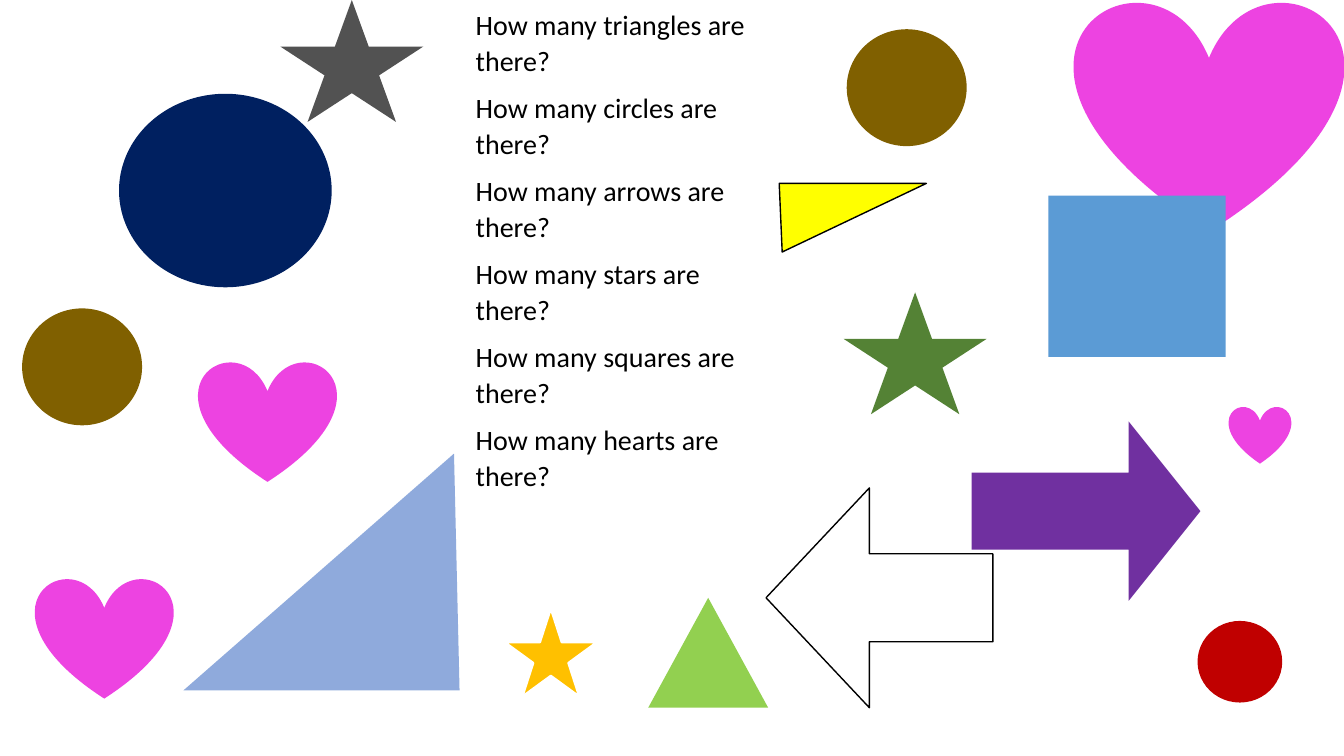
from pptx import Presentation
from pptx.dml.color import RGBColor
from pptx.enum.shapes import MSO_SHAPE
from pptx.enum.text import MSO_ANCHOR, MSO_AUTO_SIZE, PP_ALIGN
from pptx.oxml.xmlchemy import OxmlElement
from pptx.util import Pt

CIRCLE, HEART, STAR = MSO_SHAPE.OVAL, MSO_SHAPE.HEART, MSO_SHAPE.STAR_5_POINT
RECT, TRIANGLE = MSO_SHAPE.RECTANGLE, MSO_SHAPE.ISOSCELES_TRIANGLE
ARROW = MSO_SHAPE.RIGHT_ARROW
TOP, NO_FIT, LEFT = MSO_ANCHOR.TOP, MSO_AUTO_SIZE.NONE, PP_ALIGN.LEFT

BROWN, PINK, BLACK, WHITE = "806000", "ED43E1", "000000", "FFFFFF"


def rgb(value):
    return RGBColor.from_string(value)


def add_text(p, text, font="Calibri", size=20, color=BLACK):
    r = p.add_run()
    r.text = text
    r.font.name = font
    r.font.size = Pt(size)
    r.font.color.rgb = rgb(color)


class ShapeSlide:
    """Holds the text style and the current slide."""

    def __init__(self, prs, line_spacing=1.07, space_after=8):
        self.slide = prs.slides.add_slide(prs.slide_layouts[1])
        self.line_spacing = line_spacing
        self.space_after = space_after
        title = self.slide.shapes.title._element
        title.getparent().remove(title)

    def shape(self, kind, box, fill, line=None, width=1, adj=(), rotation=0,
              flip=False):
        sp = self.slide.shapes.add_shape(kind, *map(Pt, box))
        sp.shadow.inherit = False
        sp.fill.solid()
        sp.fill.fore_color.rgb = rgb(fill)
        if line:
            sp.line.color.rgb = rgb(line)
            sp.line.width = Pt(width)
        else:
            sp.line.fill.background()
        for i, value in enumerate(adj):
            sp.adjustments[i] = value
        sp.rotation = rotation
        if flip:
            sp._element.spPr.xfrm.set("flipH", "1")

    def questions(self, box, lines):
        sp = self.slide.placeholders[1]
        sp.left, sp.top, sp.width, sp.height = map(Pt, box)
        tf = sp.text_frame
        tf.word_wrap, tf.auto_size, tf.vertical_anchor = True, NO_FIT, TOP
        for i, text in enumerate(lines):
            p = tf.add_paragraph() if i else tf.paragraphs[0]
            p.alignment = LEFT
            p.line_spacing = self.line_spacing
            p.space_before, p.space_after = Pt(0), Pt(self.space_after)
            pPr = p._p.get_or_add_pPr()
            pPr.set("marL", "0")
            pPr.set("indent", "0")
            pPr.append(OxmlElement("a:buNone"))
            add_text(p, text)


def main():
    prs = Presentation()
    prs.slide_width, prs.slide_height = Pt(960), Pt(540)
    s = ShapeSlide(prs)

    # Questions
    things = ("triangles", "circles", "arrows", "stars", "squares", "hearts")
    s.questions((332.6, 0, 218.2, 357.1),
                [f"How many {thing} are there?" for thing in things])

    # Circles
    for box, fill in (((15.8, 220.3, 85.7, 83.5), BROWN),
                      ((604.8, 20.9, 85.7, 83.5), BROWN),
                      ((85, 67, 151.9, 138.2), "002060"),
                      ((855.4, 443.5, 60.5, 58.3), "C00000")):
        s.shape(CIRCLE, box, fill)

    # Hearts
    for box in ((767.5, 0, 192.2, 165.6), (25.2, 412.6, 98.6, 86.4),
                (141.8, 257.8, 98.6, 86.4), (877.7, 290.2, 44.6, 41)):
        s.shape(HEART, box, PINK)

    # Stars
    s.shape(STAR, (360.7, 434.9, 65.5, 62.6), "FFC000", line=WHITE, width=1.5)
    s.shape(STAR, (602.6, 208.8, 102.2, 87.1), "548235")
    s.shape(STAR, (200.2, 0, 102.2, 87.1), "525252")

    # Square
    s.shape(RECT, (748.8, 139.7, 126.7, 115.2), "5B9BD5")

    # Triangles and arrows
    s.shape(TRIANGLE, (463, 427, 85.7, 78.5), "92D050")
    s.shape(TRIANGLE, (131, 324, 197.3, 169.2), "8FAADC", adj=[0.98])
    s.shape(ARROW, (694.1, 301, 163.4, 128.2), "7030A0", adj=[0.43, 0.4])
    s.shape(ARROW, (547.2, 348.5, 162, 157), WHITE, line=BLACK,
            adj=[0.4, 0.47], flip=True)
    s.shape(TRIANGLE, (556.6, 131, 105.1, 49), "FFFF00", line=BLACK,
            adj=[0.98], rotation=180)

    prs.save("out.pptx")


if __name__ == "__main__":
    main()
